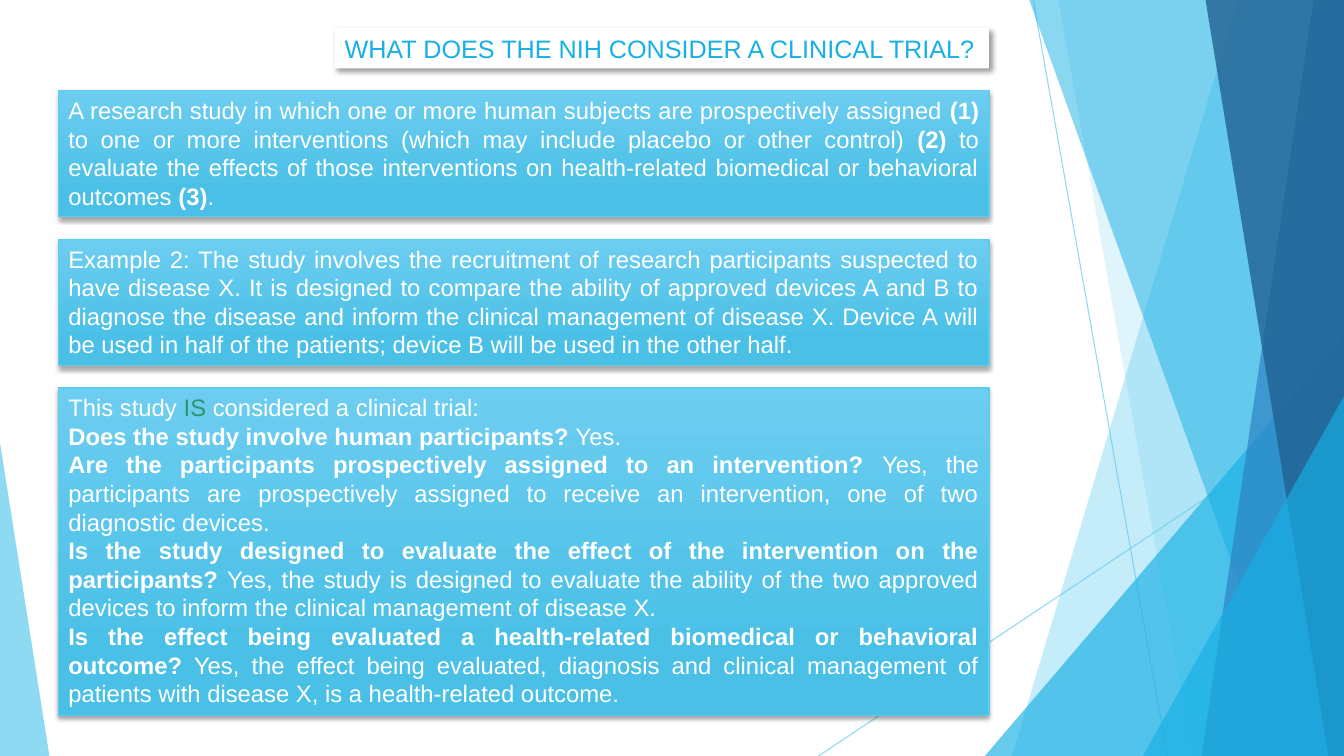
from lxml import etree
from pptx import Presentation, util as u
from pptx.dml.color import RGBColor
from pptx.enum import shapes, text
from pptx.oxml.ns import qn

SKY = RGBColor(0x5F, 0xCB, 0xEF)
CYAN = RGBColor(0x17, 0xB0, 0xE4)
BLUE = RGBColor(0x2E, 0x83, 0xC3)
NAVY = RGBColor(0x22, 0x62, 0x92)
GREEN = RGBColor(0x2E, 0x94, 0x6B)
WHITE = RGBColor(0xFF, 0xFF, 0xFF)
BLACK = RGBColor(0, 0, 0)
PANEL_TOP = RGBColor(0x6C, 0xCD, 0xF0)
PANEL_BOTTOM = RGBColor(0x4B, 0xC0, 0xE6)

WIDTH, HEIGHT = u.Inches(13.333), u.Inches(7.5)
PANEL_LEFT, PANEL_WIDTH, PANEL_GAP = 4.35, 69.23, 3

DEFINITION = [
    "A research study in which one or more human subjects are prospectively assigned *(1)* "
    "to one or more interventions (which may include placebo or other control) *(2)* "
    "to evaluate the effects of those interventions on health-related biomedical or "
    "behavioral outcomes *(3)*."
]
EXAMPLE = [
    "Example 2: The study involves the recruitment of research participants suspected to "
    "have disease X. It is designed to compare the ability of approved devices A and B to "
    "diagnose the disease and inform the clinical management of disease X. Device A will be "
    "used in half of the patients; device B will be used in the other half."
]
VERDICT = [
    "This study *IS* considered a clinical trial:",
    "*Does the study involve human participants?* Yes.",
    "*Are the participants prospectively assigned to an intervention? *Yes, the participants "
    "are prospectively assigned to receive an intervention, one of two diagnostic devices.",
    "*Is the study designed to evaluate the effect of the intervention on the participants? *"
    "Yes, the study is designed to evaluate the ability of the two approved devices to inform "
    "the clinical management of disease X.",
    "*Is the effect being evaluated a health-related biomedical or behavioral outcome?* Yes, "
    "the effect being evaluated, diagnosis and clinical management of patients with disease X, "
    "is a health-related outcome.",
]


def across(percent):
    return round(WIDTH * percent / 100)


def down(percent):
    return round(HEIGHT * percent / 100)


def set_alpha(s, percent):
    for color in s._element.spPr.iter(qn("a:srgbClr")):
        etree.SubElement(color, qn("a:alpha"), val=str(percent * 1000))


def paint(s, color, alpha):
    s.shadow.inherit = False
    s.fill.solid()
    s.fill.fore_color.rgb = color
    set_alpha(s, alpha)
    s.line.fill.background()


def add_ray(slide, x1, y1, x2, y2):
    s = slide.shapes.add_connector(
        shapes.MSO_CONNECTOR.STRAIGHT, across(x1), down(y1), across(x2), down(y2))
    s.line.color.rgb = SKY
    s.line.width = u.Pt(0.75)
    set_alpha(s, 70)
    etree.SubElement(s._element.spPr, qn("a:effectLst"))


def add_band(slide, top_left, bottom_left, color, alpha):
    builder = slide.shapes.build_freeform(across(top_left), 0)
    builder.add_line_segments(
        [(WIDTH, 0), (WIDTH, HEIGHT), (across(bottom_left), HEIGHT)], close=True)
    paint(builder.convert_to_shape(), color, alpha)


def add_corner(slide, left, top, width, apex, color, alpha):
    s = slide.shapes.add_shape(
        shapes.MSO_SHAPE.ISOSCELES_TRIANGLE,
        across(left), down(top), across(width), HEIGHT - down(top))
    s.adjustments[0] = apex
    paint(s, color, alpha)


def add_shadow(s, alpha, blur, distance, angle):
    s.shadow.inherit = False
    effects = s._element.spPr.find(qn("a:effectLst"))
    shadow = etree.SubElement(
        effects, qn("a:outerShdw"), blurRad=str(u.Pt(blur)), dist=str(u.Pt(distance)),
        dir=str(angle * 60000), algn="ctr", rotWithShape="0")
    color = etree.SubElement(shadow, qn("a:srgbClr"), val=str(BLACK))
    etree.SubElement(color, qn("a:alpha"), val=str(alpha * 1000))


def add_box(slide, left, top, width, height):
    s = slide.shapes.add_shape(
        shapes.MSO_SHAPE.RECTANGLE, across(left), down(top), across(width), down(height))
    s.text_frame.word_wrap = True
    s.text_frame.vertical_anchor = text.MSO_ANCHOR.TOP
    return s


def write(p, content, size, color, align):
    p.alignment = align
    for i, part in enumerate(content.split("*")):
        if part:
            r = p.add_run()
            r.text = part
            r.font.name = "Arial"
            r.font.size = u.Pt(size)
            r.font.bold = i % 2 == 1
            r.font.color.rgb = color


def add_title(slide, content):
    s = add_box(slide, 24.9, 3.73, 48.68, 5.33)
    s.fill.solid()
    s.fill.fore_color.rgb = WHITE
    s.line.fill.background()
    add_shadow(s, 40, 4, 3, 45)
    write(s.text_frame.paragraphs[0], content, 18, CYAN, text.PP_ALIGN.LEFT)


def add_panel(slide, top, height, paragraphs):
    s = add_box(slide, PANEL_LEFT, top, PANEL_WIDTH, height)
    s.fill.gradient()
    s.fill.gradient_angle = 270
    stops = zip(s.fill.gradient_stops, (0, 0.78), (PANEL_TOP, PANEL_BOTTOM))
    for stop, position, color in stops:
        stop.position = position
        stop.color.rgb = color
    s.line.color.rgb = SKY
    s.line.width = u.Pt(1)
    add_shadow(s, 35, 3, 2, 90)
    tf = s.text_frame
    for i, content in enumerate(paragraphs):
        p = tf.add_paragraph() if i else tf.paragraphs[0]
        write(p, content, 17, WHITE, text.PP_ALIGN.JUSTIFY)
    return s


def add_backdrop(slide):
    add_ray(slide, 76.88, 0, 86.85, 100)
    add_ray(slide, 100, 53.73, 60.9, 100)
    add_band(slide, 92.1, 75.3, SKY, 36)
    add_band(slide, 78.75, 88.73, SKY, 20)
    add_corner(slide, 73.28, 44.4, 26.72, 1, CYAN, 66)
    add_band(slide, 76.58, 96.83, CYAN, 50)
    add_band(slide, 97.73, 89.4, BLUE, 70)
    add_band(slide, 89.7, 98.85, NAVY, 80)
    add_corner(slide, 85.05, 52.4, 14.95, 1, CYAN, 66)
    add_corner(slide, 0, 58.53, 3.68, 0, SKY, 70)


def main():
    prs = Presentation()
    prs.slide_width, prs.slide_height = WIDTH, HEIGHT
    slide = prs.slides.add_slide(prs.slide_layouts[6])
    add_backdrop(slide)
    add_title(slide, "WHAT DOES THE NIH CONSIDER A CLINICAL TRIAL?")
    top = 12
    for height, paragraphs in ((16.67, DEFINITION), (16.67, EXAMPLE), (43.33, VERDICT)):
        panel = add_panel(slide, top, height, paragraphs)
        top += height + PANEL_GAP
    verdict_word = panel.text_frame.paragraphs[0].runs[1]
    verdict_word.font.bold = False
    verdict_word.font.color.rgb = GREEN
    prs.save("out.pptx")


if __name__ == "__main__":
    main()
